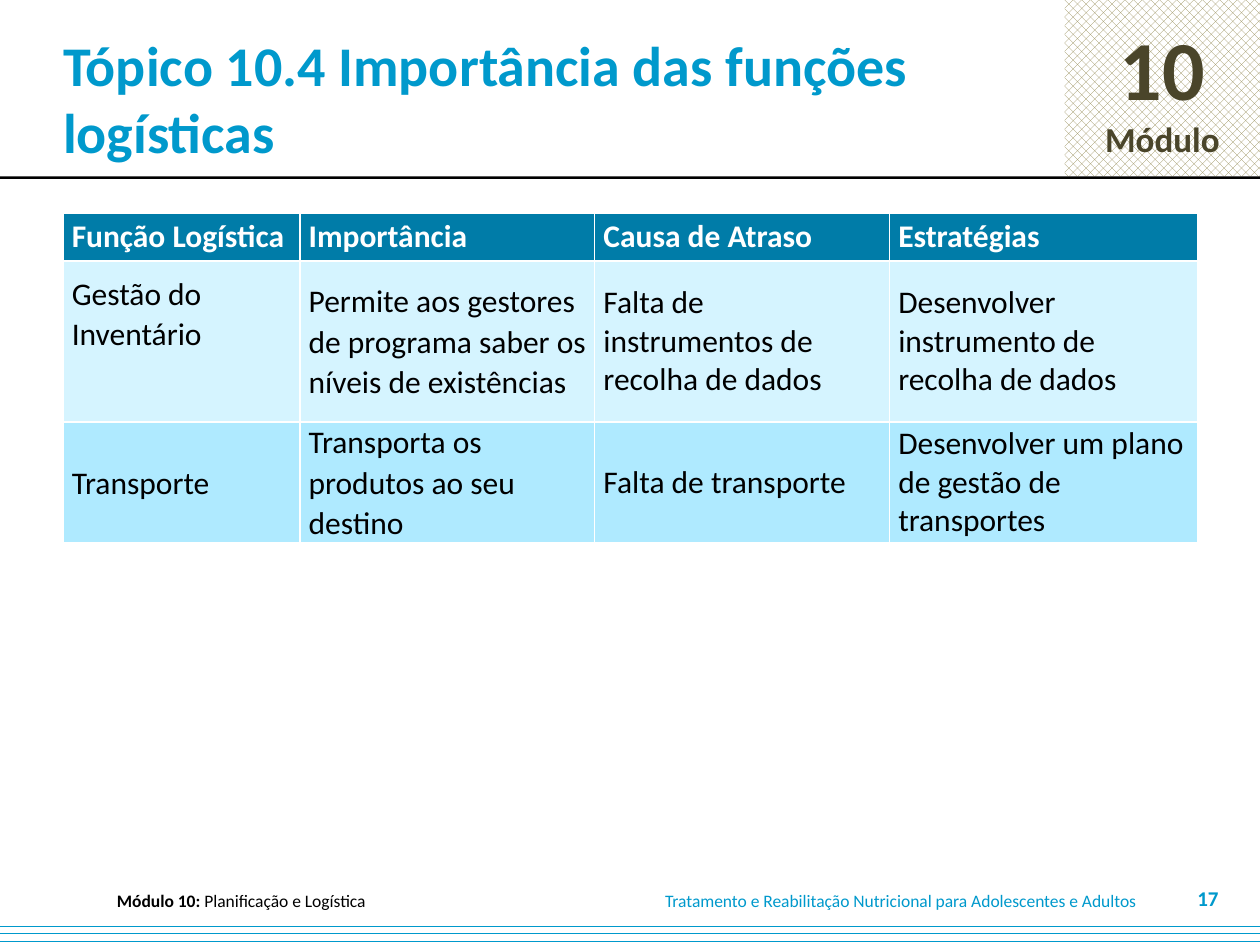
from lxml import etree
from pptx import Presentation
from pptx.dml.color import RGBColor
from pptx.enum import dml, shapes, text
from pptx.oxml.ns import qn
from pptx.util import Inches, Pt

THEME = {
    "font": "Calibri",
    "blue": "0099CC", "black": "000000", "white": "FFFFFF",
    "brown": "4A452A", "khaki": "948A54", "header": "007CA8",
    "bands": ("D5F4FF", "AFEAFF"),
    "title": 32, "number": 48, "module": 20, "table": 18, "footer": 10, "page": 12,
}
ALIGN, ANCHOR = text.PP_ALIGN, text.MSO_ANCHOR

TITLE = "Tópico 10.4 Importância das funções logísticas"
MODULE = ("10", "Módulo")
FOOTER_MODULE = ("Módulo 10: ", "Planificação e Logística")
FOOTER_COURSE = "Tratamento e Reabilitação Nutricional para Adolescentes e Adultos"
PAGE = "17"

HEADERS = ("Função Logística", "Importância", "Causa de Atraso", "Estratégias")
FUNCTIONS = (
    ("Gestão do Inventário",
     "Permite aos gestores de programa saber os níveis de existências",
     "Falta de instrumentos de recolha de dados",
     "Desenvolver instrumento de recolha de dados"),
    ("Transporte",
     "Transporta os produtos ao seu destino",
     "Falta de transporte",
     "Desenvolver um plano de gestão de transportes"),
)
COLUMN_WIDTHS = (1.88, 2.34, 2.34, 2.45)
ROW_HEIGHTS = (0.38, 1.28, 0.96)
LOOSE_COLUMNS = 2  # leading columns set with wider line spacing


def color(name):
    return RGBColor.from_string(THEME.get(name, name))


def set_values(target, values):
    for name, value in values.items():
        setattr(target, name, value)


def set_margins(target, margins):
    sides = ("left", "top", "right", "bottom")
    set_values(target, {f"margin_{side}": Inches(size) for side, size in zip(sides, margins)})


def add_run(paragraph, words, size, ink, bold=False):
    run = paragraph.add_run()
    run.text = words
    set_values(run.font, {"name": THEME["font"], "size": Pt(THEME[size]), "bold": bold})
    run.font.color.rgb = color(ink)


def add_text(slide, box, runs, align=ALIGN.LEFT, margins=(0.1, 0, 0.1, 0)):
    """Add a one-paragraph box; each run is (words, size, ink, bold)."""
    frame = slide.shapes.add_textbox(*map(Inches, box)).text_frame
    set_values(frame, {"word_wrap": True, "vertical_anchor": ANCHOR.MIDDLE})
    set_margins(frame, margins)
    frame.paragraphs[0].alignment = align
    for run in runs:
        add_run(frame.paragraphs[0], *run)


def add_block(slide, box, ink, pattern=None):
    shape = slide.shapes.add_shape(shapes.MSO_SHAPE.RECTANGLE, *map(Inches, box))
    shape.shadow.inherit = False
    shape.line.fill.background()
    if pattern is None:
        shape.fill.solid()
    else:
        shape.fill.patterned()
        shape.fill.pattern = pattern
        shape.fill.back_color.rgb = color("white")
    shape.fill.fore_color.rgb = color(ink)
    return shape


def add_module_badge(slide):
    badge = add_block(slide, (8.45, 0, 1.55, 1.4), "khaki", dml.MSO_PATTERN.PERCENT_50)
    frame = badge.text_frame
    frame.vertical_anchor = ANCHOR.MIDDLE
    for index, (words, size) in enumerate(zip(MODULE, ("number", "module"))):
        paragraph = frame.add_paragraph() if index else frame.paragraphs[0]
        paragraph.alignment = ALIGN.CENTER
        add_run(paragraph, words, size, "brown", True)


def add_borders(cell):
    properties = cell._tc.get_or_add_tcPr()
    for index, side in enumerate(("lnL", "lnR", "lnT", "lnB")):
        line = etree.Element(qn(f"a:{side}"), w=str(Pt(1)))
        fill = etree.SubElement(line, qn("a:solidFill"))
        etree.SubElement(fill, qn("a:srgbClr"), val=THEME["white"])
        properties.insert(index, line)


def add_function_table(slide):
    rows = (HEADERS, *FUNCTIONS)
    box = (0.5, 1.69, sum(COLUMN_WIDTHS), sum(ROW_HEIGHTS))
    table = slide.shapes.add_table(len(rows), len(HEADERS), *map(Inches, box)).table
    for column, width in zip(table.columns, COLUMN_WIDTHS):
        column.width = Inches(width)
    for row, height in zip(table.rows, ROW_HEIGHTS):
        row.height = Inches(height)
    fills = (THEME["header"], *THEME["bands"])
    for row_index, (words, fill) in enumerate(zip(rows, fills)):
        is_header = row_index == 0
        for column_index, entry in enumerate(words):
            cell = table.cell(row_index, column_index)
            cell.fill.solid()
            cell.fill.fore_color.rgb = color(fill)
            cell.vertical_anchor = ANCHOR.MIDDLE
            set_margins(cell, (0.07, 0, 0.07, 0))
            paragraph = cell.text_frame.paragraphs[0]
            add_run(paragraph, entry, "table", "white" if is_header else "black", is_header)
            if not is_header and column_index < LOOSE_COLUMNS:
                set_values(paragraph, {"line_spacing": 1.05, "space_after": Pt(10)})
            add_borders(cell)
    # The first function sits high in its row.
    set_values(table.cell(1, 0), {"vertical_anchor": ANCHOR.TOP, "margin_top": Inches(0.1)})


def main():
    presentation = Presentation()
    set_values(presentation, {"slide_width": Inches(10), "slide_height": Inches(7.5)})
    slide = presentation.slides.add_slide(presentation.slide_layouts[6])

    add_module_badge(slide)
    add_block(slide, (-0.02, 1.4, 10.02, 0.02), "black")
    add_block(slide, (0, 7.29, 10, 0.21), "blue", dml.MSO_PATTERN.DASHED_HORIZONTAL)
    add_text(slide, (5.18, 7.05, 4.05, 0.2), [(FOOTER_COURSE, "footer", "blue")])
    label, subject = FOOTER_MODULE
    add_text(slide, (0.83, 7.05, 4.32, 0.2),
             [(label, "footer", "black", True), (subject, "footer", "black")])
    add_text(slide, (0, 0, 8.58, 1.55), [(TITLE, "title", "blue", True)],
             margins=(0.5, 0.05, 0.1, 0.05))
    add_text(slide, (9.27, 7, 0.5, 0.25), [(PAGE, "page", "blue", True)], ALIGN.RIGHT)
    add_function_table(slide)
    presentation.save("out.pptx")


if __name__ == "__main__":
    main()
